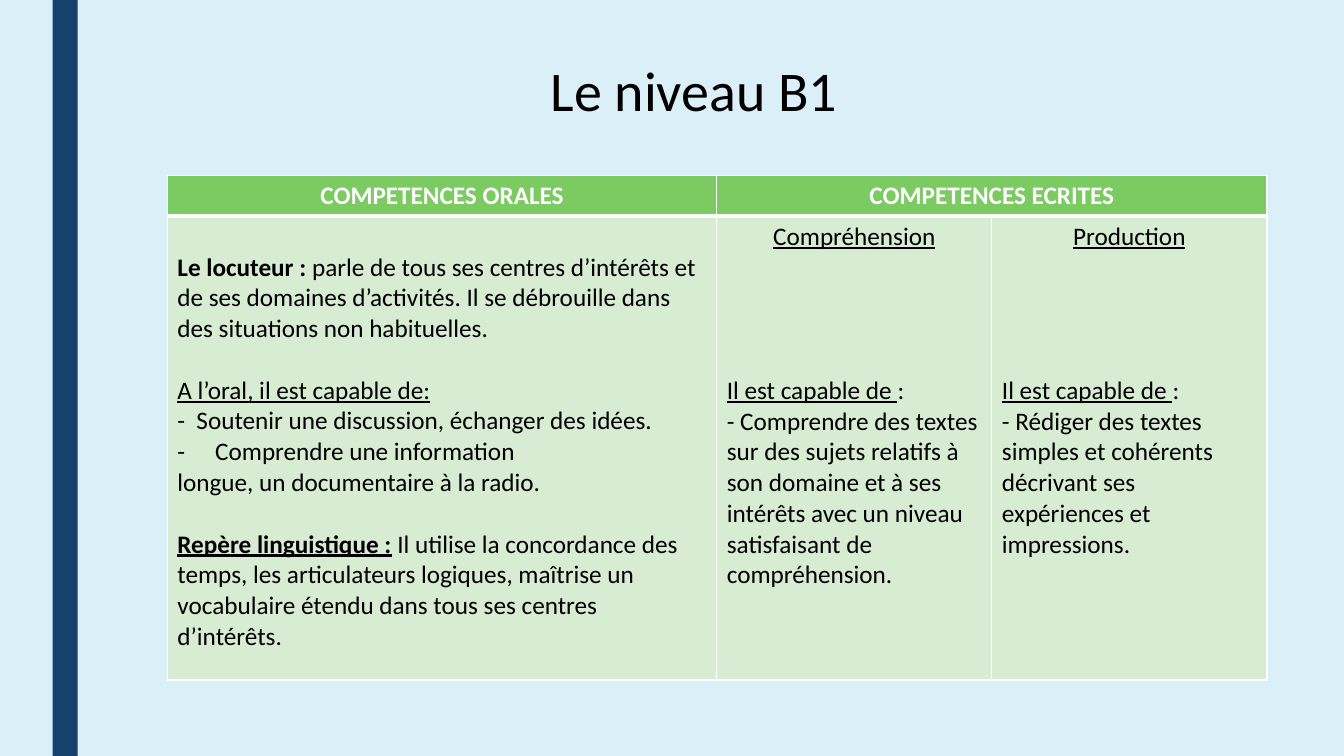
"""Build the slide that sums up the skills of level B1."""
from lxml import etree
from pptx import Presentation
from pptx import util as u
from pptx.dml.color import RGBColor
from pptx.enum import shapes, text
from pptx.oxml.ns import qn

COLOURS = {"sky": "DBEFF9", "navy": "17406D", "green": "7CCA62",
           "pale": "D7ECD3", "white": "FFFFFF", "black": "000000"}
FONT = "Calibri"
LINE = 22
HEADERS = {0: "COMPETENCES ORALES", 1: "COMPETENCES ECRITES"}
ORAL = [
    {"spans": [("Le locuteur : ", "b"),
               ("parle de tous ses centres d’intérêts et de ses domaines d’activités. "
                "Il se débrouille dans des situations non habituelles.", "")]},
    {"spans": [("A l’oral, il est capable de:", "u")], "gap": 1},
    {"spans": [("-  Soutenir une discussion, échanger des idées.", "")]},
    {"spans": [("Comprendre une information", "")], "bullet": True},
    {"spans": [("longue, un documentaire à la radio.", "")]},
    {"spans": [("Repère linguistique :", "bu"),
               (" Il utilise la concordance des temps, les articulateurs logiques, "
                "maîtrise un vocabulaire étendu dans tous ses centres d’intérêts.", "")],
     "gap": 1},
]
WRITTEN = {
    "Compréhension": "- Comprendre des textes sur des sujets relatifs à son domaine et à ses "
                     "intérêts avec un niveau satisfaisant de compréhension.",
    "Production": "- Rédiger des textes simples et cohérents décrivant ses expériences "
                  "et impressions.",
}


def rgb(name):
    """Return the named colour."""
    return RGBColor.from_string(COLOURS[name])


def paint(target, name):
    """Give a solid fill to a shape, cell or background."""
    target.fill.solid()
    target.fill.fore_color.rgb = rgb(name)


def style(span, size=18, colour="black", marks=""):
    """Format a run; marks may hold b for bold and u for underline."""
    span.font.name = FONT
    span.font.size = u.Pt(size)
    span.font.bold = "b" in marks
    span.font.underline = "u" in marks
    span.font.color.rgb = rgb(colour)


def add_bar(page):
    """Draw the vertical bar at the left."""
    bar = page.shapes.add_shape(shapes.MSO_SHAPE.RECTANGLE,
                                u.Pt(37.5), u.Pt(0), u.Pt(18), u.Pt(540))
    bar.shadow.inherit = False
    paint(bar, "navy")
    bar.line.fill.background()


def set_title(page, words):
    """Place and format the title."""
    title = page.shapes.title
    title.left, title.top, title.width, title.height = map(u.Pt, (78.5, 14.4, 834.5, 266.4))
    frame = title.text_frame
    frame.text = words
    frame.vertical_anchor = text.MSO_ANCHOR.TOP
    frame.margin_top = u.Pt(3.6 + LINE)
    para = frame.paragraphs[0]
    para.alignment = text.PP_ALIGN.CENTER
    style(para.runs[0], 40)


def add_bullet(para):
    """Give a paragraph a dash with a hanging indent."""
    props = para._p.get_or_add_pPr()
    props.set("marL", str(u.Pt(27)))
    props.set("indent", str(-u.Pt(27)))
    etree.SubElement(props, qn("a:buFont"), typeface=FONT)
    etree.SubElement(props, qn("a:buChar"), char="-")


def set_border(cell, bottom):
    """Draw white borders round a cell, with the given bottom width."""
    props = cell._tc.get_or_add_tcPr()
    for place, (side, width) in enumerate(zip("LRTB", (1, 1, 1, bottom))):
        line = etree.Element(qn(f"a:ln{side}"), w=str(u.Pt(width)))
        fill = etree.SubElement(line, qn("a:solidFill"))
        etree.SubElement(fill, qn("a:srgbClr"), val=COLOURS["white"])
        props.insert(place, line)


def fill_cell(cell, items):
    """Write paragraphs of formatted spans into a cell."""
    frame = cell.text_frame
    for index, item in enumerate(items):
        para = frame.add_paragraph() if index else frame.paragraphs[0]
        if item.get("centred"):
            para.alignment = text.PP_ALIGN.CENTER
        if "gap" in item:
            para.space_before = u.Pt(item["gap"] * LINE)
        if item.get("bullet"):
            add_bullet(para)
        for words, marks in item["spans"]:
            span = para.add_run()
            span.text = words
            style(span, item.get("size", 18), item.get("colour", "black"), marks)


def written_items(heading, ability):
    """Return the paragraphs of a written skill."""
    return [{"spans": [(heading, "u")], "centred": True},
            {"spans": [("Il est capable de ", "u"), (":", "")], "gap": 4},
            {"spans": [(ability, "")]}]


def add_skills(page):
    """Add the table of oral and written skills."""
    table = page.shapes.add_table(2, 3, u.Pt(119.5), u.Pt(125.3),
                                  u.Pt(785.5), u.Pt(360.5)).table
    for column, width in zip(table.columns, (392.5, 196.5, 196.5)):
        column.width = u.Pt(width)
    for row, height in zip(table.rows, (29.2, 331.3)):
        row.height = u.Pt(height)
    for row, colour, bottom in zip(table.rows, ("green", "pale"), (3, 1)):
        for cell in row.cells:
            paint(cell, colour)
            set_border(cell, bottom)
    table.cell(0, 1).merge(table.cell(0, 2))
    for column, words in HEADERS.items():
        fill_cell(table.cell(0, column),
                  [{"spans": [(words, "b")], "centred": True, "colour": "white"}])
    oral = table.cell(1, 0)
    oral.margin_top = u.Pt(3.6 + LINE)
    fill_cell(oral, ORAL)
    for column, skill in enumerate(WRITTEN.items(), 1):
        fill_cell(table.cell(1, column), written_items(*skill))


def main():
    """Build and save the deck."""
    deck = Presentation()
    deck.slide_width, deck.slide_height = u.Pt(960), u.Pt(540)
    page = deck.slides.add_slide(deck.slide_layouts[5])
    paint(page.background, "sky")
    add_bar(page)
    set_title(page, "Le niveau B1")
    add_skills(page)
    deck.save("out.pptx")


if __name__ == "__main__":
    main()
